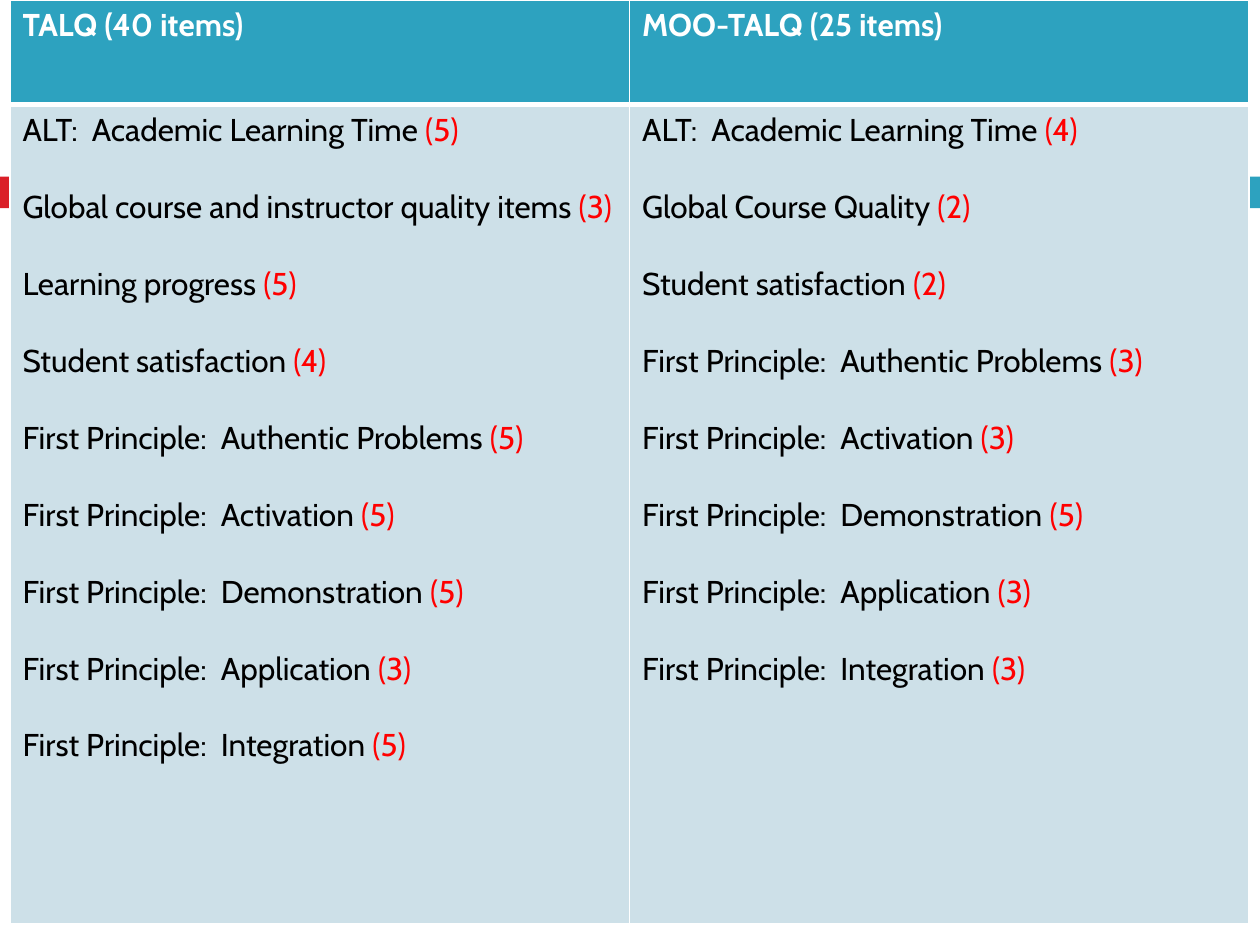
from pptx import Presentation
from pptx.dml.color import RGBColor as RGB
from pptx.enum.shapes import MSO_SHAPE as SHAPE
from pptx.oxml import parse_xml
from pptx.oxml.ns import nsdecls
from pptx.util import Cm, Pt

COLORS = {"red": "DA1F28", "teal": "2DA2BF", "pale": "CDE0E8",
          "white": "FFFFFF", "black": "000000", "count": "FF0000"}
PRINCIPLES = ["Authentic Problems", "Activation", "Demonstration",
              "Application", "Integration"]

# Each questionnaire: heading, scales, number of items in each scale
QUESTIONNAIRES = [
    ("TALQ (40 items)",
     ["ALT:  Academic Learning Time", "Global course and instructor quality items",
      "Learning progress", "Student satisfaction"],
     [5, 3, 5, 4, 5, 5, 5, 3, 5]),
    ("MOO-TALQ (25 items)",
     ["ALT:  Academic Learning Time", "Global Course Quality",
      "Student satisfaction"],
     [4, 2, 2, 3, 3, 5, 3, 3]),
]


def add_run(p, text, color, bold=False):
    r = p.add_run()
    r.text = text
    for name, value in {"name": "Cabin", "size": Pt(18), "bold": bold}.items():
        setattr(r.font, name, value)
    r.font.color.rgb = RGB.from_string(COLORS[color])


def style_cell(cell, fill, borders):
    tc_pr = cell._tc.get_or_add_tcPr()
    for side, width in borders.items():
        tc_pr.append(parse_xml(
            f'<a:ln{side} {nsdecls("a")} w="{Pt(width)}"><a:solidFill>'
            f'<a:srgbClr val="{COLORS["white"]}"/></a:solidFill></a:ln{side}>'))
    cell.fill.solid()
    cell.fill.fore_color.rgb = RGB.from_string(COLORS[fill])


prs = Presentation()
prs.slide_width, prs.slide_height = Cm(25.4), Cm(19.05)
s = prs.slides.add_slide(prs.slide_layouts[6])

# Bars behind the table
for left, width, color in [(0, 1.48, "red"), (1.65, 23.75, "teal")]:
    sp = s.shapes.add_shape(SHAPE.RECTANGLE, Cm(left), Cm(3.56), Cm(width), Cm(0.64))
    sp.shadow.inherit = False
    sp.fill.solid()
    sp.fill.fore_color.rgb = RGB.from_string(COLORS[color])
    sp.line.fill.background()

# Comparison table
table = s.shapes.add_table(2, 2, Cm(0.2), Cm(0), Cm(24.98), Cm(18.62)).table
for row, height in zip(table.rows, [2.11, 16.51]):
    row.height = Cm(height)

for col, (heading, scales, counts) in enumerate(QUESTIONNAIRES):
    table.columns[col].width = Cm(12.49)
    head, body = table.cell(0, col), table.cell(1, col)
    style_cell(head, "teal", {"L": 1, "R": 1, "T": 1, "B": 3})
    style_cell(body, "pale", {"L": 1, "R": 1, "T": 3, "B": 1})
    add_run(head.text_frame.paragraphs[0], heading, "white", bold=True)

    # One paragraph per scale, with its item count in red
    tf = body.text_frame
    names = scales + [f"First Principle:  {name}" for name in PRINCIPLES]
    for i, (name, count) in enumerate(zip(names, counts)):
        p = tf.add_paragraph() if i else tf.paragraphs[0]
        p.space_after = Pt(22)
        add_run(p, f"{name} ", "black")
        add_run(p, f"({count})", "count")

prs.save("out.pptx")
